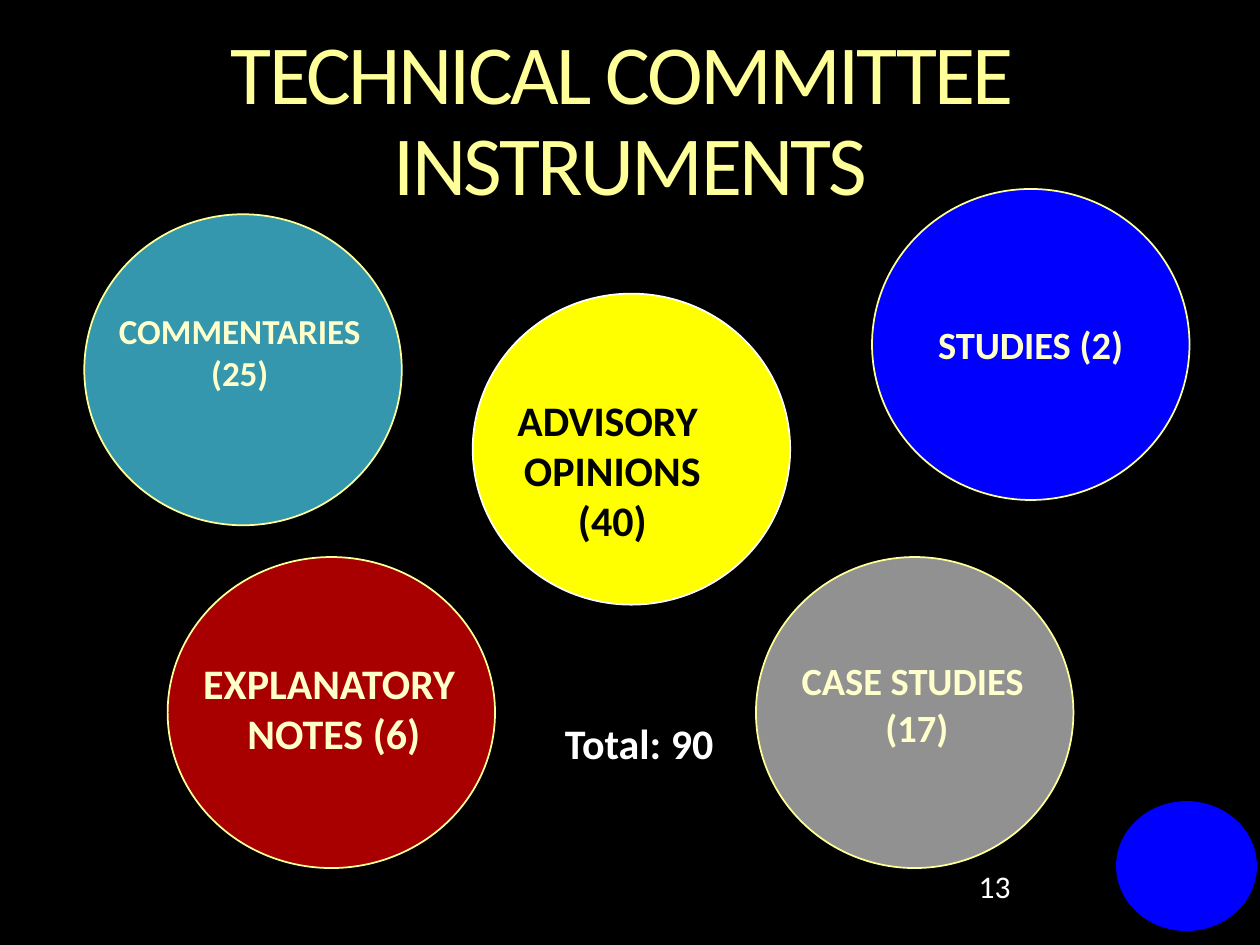
from pptx import Presentation
from pptx.dml.color import RGBColor
from pptx.enum.shapes import MSO_SHAPE as Shape
from pptx.enum.text import MSO_ANCHOR as Anchor, PP_ALIGN as Align
from pptx.util import Cm, Pt

FONT = "Calibri"
CREAM = "FFFFCC"
PALE_YELLOW = "FFFF99"
WHITE = "FFFFFF"
CIRCLE_WIDTH, CIRCLE_HEIGHT = 6.4, 6.27

CIRCLES = [
    (9.53, 5.92, CIRCLE_WIDTH, "FFFF00", WHITE),
    (1.7, 4.32, CIRCLE_WIDTH, "3497AE", PALE_YELLOW),
    (3.38, 11.23, 6.6, "A80000", PALE_YELLOW),
    (15.24, 11.23, CIRCLE_WIDTH, "919191", PALE_YELLOW),
    (17.58, 3.81, CIRCLE_WIDTH, "0000FF", PALE_YELLOW),
]

LABELS = [
    (["ADVISORY ", "OPINIONS", "(40)"], (10.16, 7.82, 4.37, 3.33), 24, "000000"),
    (["COMMENTARIES", "(25)"], (2.13, 6.12, 5.41, 1.96), 20, CREAM),
    (["EXPLANATORY", " NOTES (6)"], (3.18, 13.13, 6.91, 2.29), 24, CREAM),
    (["STUDIES (2)"], (18.26, 6.35, 5.03, 1.17), 22, CREAM),
    (["CASE STUDIES ", "(17)"], (15.88, 13.13, 5.21, 2.13), 22, CREAM),
    (["Total: 90"], (10.69, 14.33, 4.39, 1.27), 24, WHITE),
]


def color(hex_value):
    """Turn a hex string into a colour."""
    return RGBColor.from_string(hex_value)


def add_span(para, text, size, hex_value, bold=False):
    """Add one formatted run to a paragraph."""
    span = para.add_run()
    span.text = text
    span.font.name = FONT
    span.font.size = Pt(size)
    span.font.bold = bold
    span.font.color.rgb = color(hex_value)
    return span


def set_title(page, lines):
    """Place the title and write its lines."""
    title = page.shapes.title
    title.left, title.top = Cm(1.07), Cm(0.64)
    title.width, title.height = Cm(23.29), Cm(3.68)
    frame = title.text_frame
    frame.margin_left = frame.margin_right = 0
    frame.margin_top = frame.margin_bottom = 0
    frame.vertical_anchor = Anchor.TOP
    frame.word_wrap = True
    para = frame.paragraphs[0]
    para.alignment = Align.CENTER
    para.line_spacing = 0.9
    for index, line in enumerate(lines):
        if index:
            para.add_line_break()
        span = add_span(para, line, 48, PALE_YELLOW)
        span._r.get_or_add_rPr().set("spc", "-150")


def add_ellipse(page, bounds, fill, line=None):
    """Draw a filled ellipse with an optional outline."""
    ellipse = page.shapes.add_shape(Shape.OVAL, *map(Cm, bounds))
    ellipse.shadow.inherit = False
    ellipse.fill.solid()
    ellipse.fill.fore_color.rgb = color(fill)
    if line:
        ellipse.line.color.rgb = color(line)
        ellipse.line.width = Pt(1)
    else:
        ellipse.line.fill.background()


def add_text(page, lines, bounds, size, hex_value, bold=True, align=Align.CENTER):
    """Add a text box with one paragraph per line."""
    box = page.shapes.add_textbox(*map(Cm, bounds))
    frame = box.text_frame
    frame.word_wrap = False
    for index, line in enumerate(lines):
        para = frame.add_paragraph() if index else frame.paragraphs[0]
        para.alignment = align
        add_span(para, line, size, hex_value, bold)


def main():
    """Build the slide and save it."""
    deck = Presentation()
    deck.slide_width, deck.slide_height = Cm(25.4), Cm(19.05)
    page = deck.slides.add_slide(deck.slide_layouts[5])
    page.background.fill.solid()
    page.background.fill.fore_color.rgb = color("000000")

    set_title(page, ["TECHNICAL COMMITTEE ", "INSTRUMENTS"])
    for left, top, width, fill, line in CIRCLES:
        add_ellipse(page, (left, top, width, CIRCLE_HEIGHT), fill, line)
    for label in LABELS:
        add_text(page, *label)
    add_text(page, ["13"], (19.48, 17.35, 5.92, 1.32), 18, WHITE, False, Align.LEFT)
    add_ellipse(page, (22.5, 16.15, 2.84, 2.62), "0000FF")

    deck.save("out.pptx")


if __name__ == "__main__":
    main()
